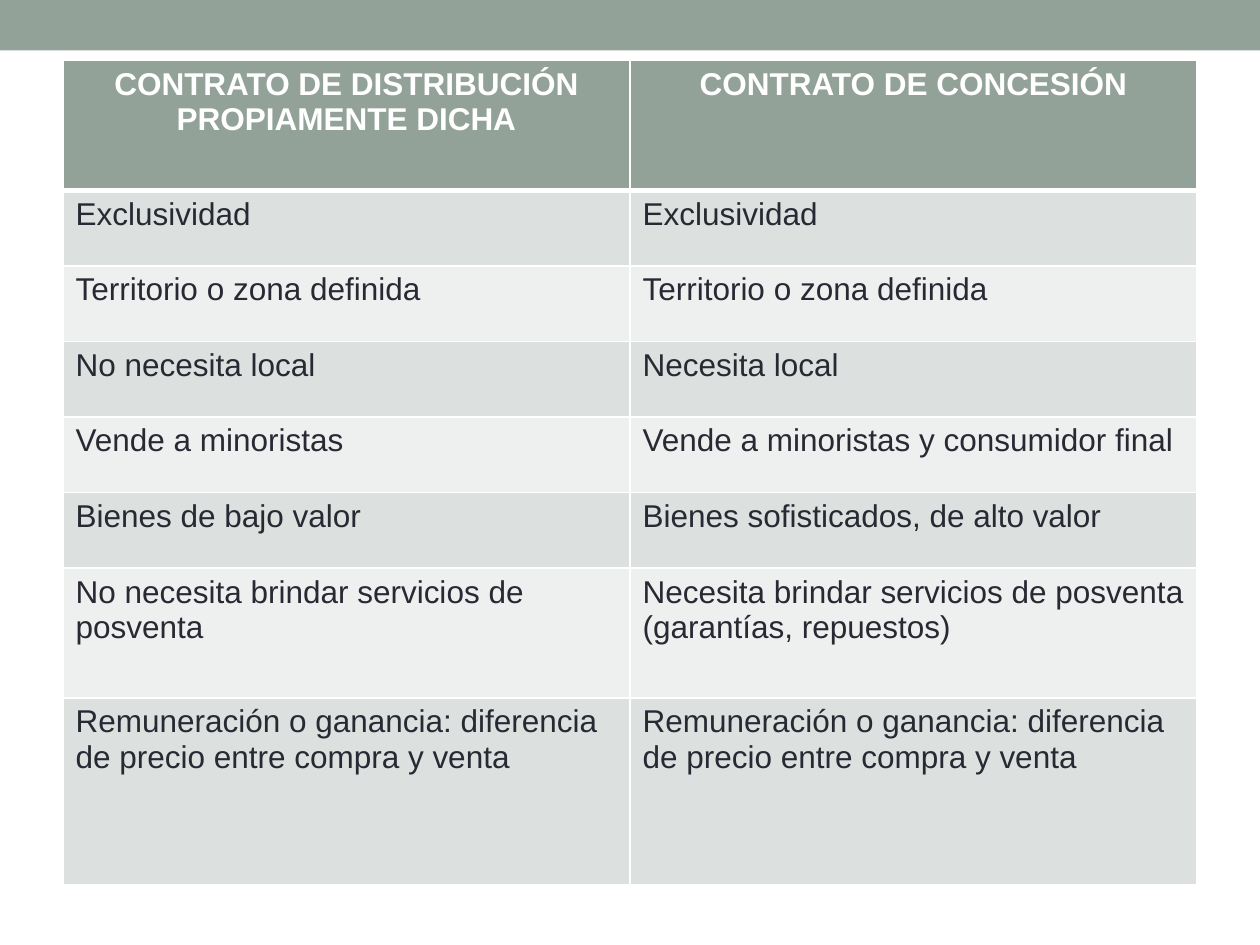
import pptx
import pptx.dml.color
import pptx.enum.shapes
import pptx.enum.text
import pptx.util
from lxml import etree
from pptx.dml.color import RGBColor
from pptx.oxml.ns import qn
from pptx.util import Inches

SAGE = RGBColor(0x93, 0xA2, 0x99)
BAND_DARK = RGBColor(0xDC, 0xE0, 0xDE)
BAND_LIGHT = RGBColor(0xEE, 0xF0, 0xEF)
INK = RGBColor(0x29, 0x29, 0x34)
WHITE = RGBColor(0xFF, 0xFF, 0xFF)

CONTRACTS = [
    ("CONTRATO DE DISTRIBUCIÓN PROPIAMENTE DICHA", "CONTRATO DE CONCESIÓN"),
    ("Exclusividad", "Exclusividad"),
    ("Territorio o zona definida", "Territorio o zona definida"),
    ("No necesita local", "Necesita local"),
    ("Vende a minoristas", "Vende a minoristas y consumidor final"),
    ("Bienes de bajo valor", "Bienes sofisticados, de alto valor"),
    ("No necesita brindar servicios de posventa",
     "Necesita brindar servicios de posventa (garantías, repuestos)"),
    ("Remuneración o ganancia: diferencia de precio entre compra y venta",) * 2,
]
ROW_HEIGHTS = [1.03] + [0.6] * 5 + [1.03, 1.48]


class SlideBuilder:
    font_name = "Arial"
    font_size = pptx.util.Pt(18)

    def __init__(self, slide):
        self.slide = slide

    def band(self, left, top, width, height, color):
        band = self.slide.shapes.add_shape(
            pptx.enum.shapes.MSO_SHAPE.RECTANGLE,
            Inches(left), Inches(top), Inches(width), Inches(height))
        band.shadow.inherit = False
        band.fill.solid()
        band.fill.fore_color.rgb = color
        band.line.fill.background()

    def table(self, left, top, width, rows, heights):
        column_count = len(rows[0])
        table = self.slide.shapes.add_table(
            len(rows), column_count, Inches(left), Inches(top),
            Inches(width), Inches(sum(heights))).table
        for column in table.columns:
            column.width = Inches(width / column_count)
        for index, (texts, height) in enumerate(zip(rows, heights)):
            table.rows[index].height = Inches(height)
            for cell, text in zip(table.rows[index].cells, texts):
                self.cell(cell, text, index)

    def cell(self, cell, text, row):
        is_header = row == 0
        self.borders(cell, top=3 if row == 1 else 1, bottom=3 if is_header else 1)
        cell.fill.solid()
        cell.fill.fore_color.rgb = (
            SAGE if is_header else BAND_DARK if row % 2 else BAND_LIGHT)
        cell.text_frame.text = text
        paragraph = cell.text_frame.paragraphs[0]
        if is_header:
            paragraph.alignment = pptx.enum.text.PP_ALIGN.CENTER
        font = paragraph.runs[0].font
        font.name = self.font_name
        font.size = self.font_size
        font.bold = is_header
        font.color.rgb = WHITE if is_header else INK

    def borders(self, cell, top, bottom):
        """Draw white cell borders; widths are in points."""
        properties = cell._tc.get_or_add_tcPr()
        for side, points in (("L", 1), ("R", 1), ("T", top), ("B", bottom)):
            line = etree.SubElement(
                properties, qn(f"a:ln{side}"), w=str(pptx.util.Pt(points)))
            fill = etree.SubElement(line, qn("a:solidFill"))
            etree.SubElement(fill, qn("a:srgbClr"), val=str(WHITE))


def main():
    presentation = pptx.Presentation()
    presentation.slide_width = Inches(10)
    presentation.slide_height = Inches(7.5)
    builder = SlideBuilder(
        presentation.slides.add_slide(presentation.slide_layouts[6]))
    builder.band(0, 0, 10, 0.4, SAGE)
    builder.table(0.5, 0.48, 9, CONTRACTS, ROW_HEIGHTS)
    presentation.save("out.pptx")


if __name__ == "__main__":
    main()
